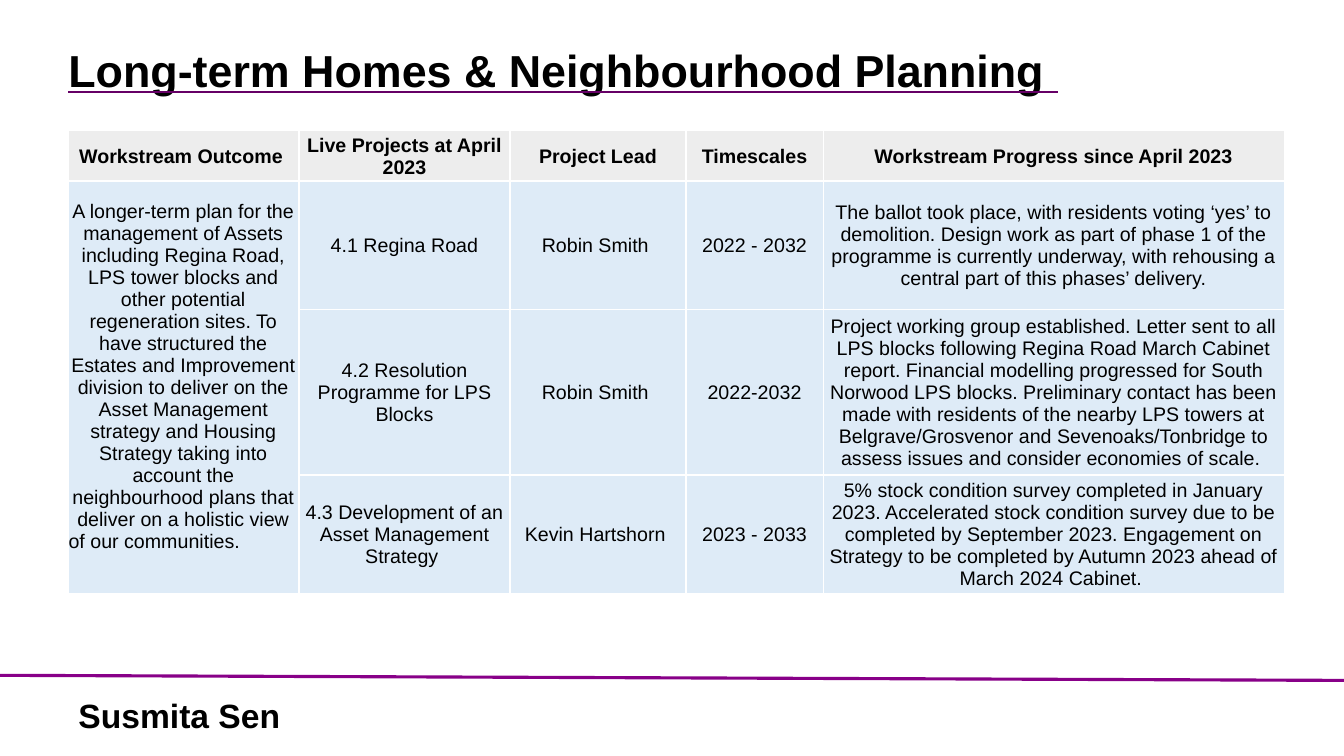
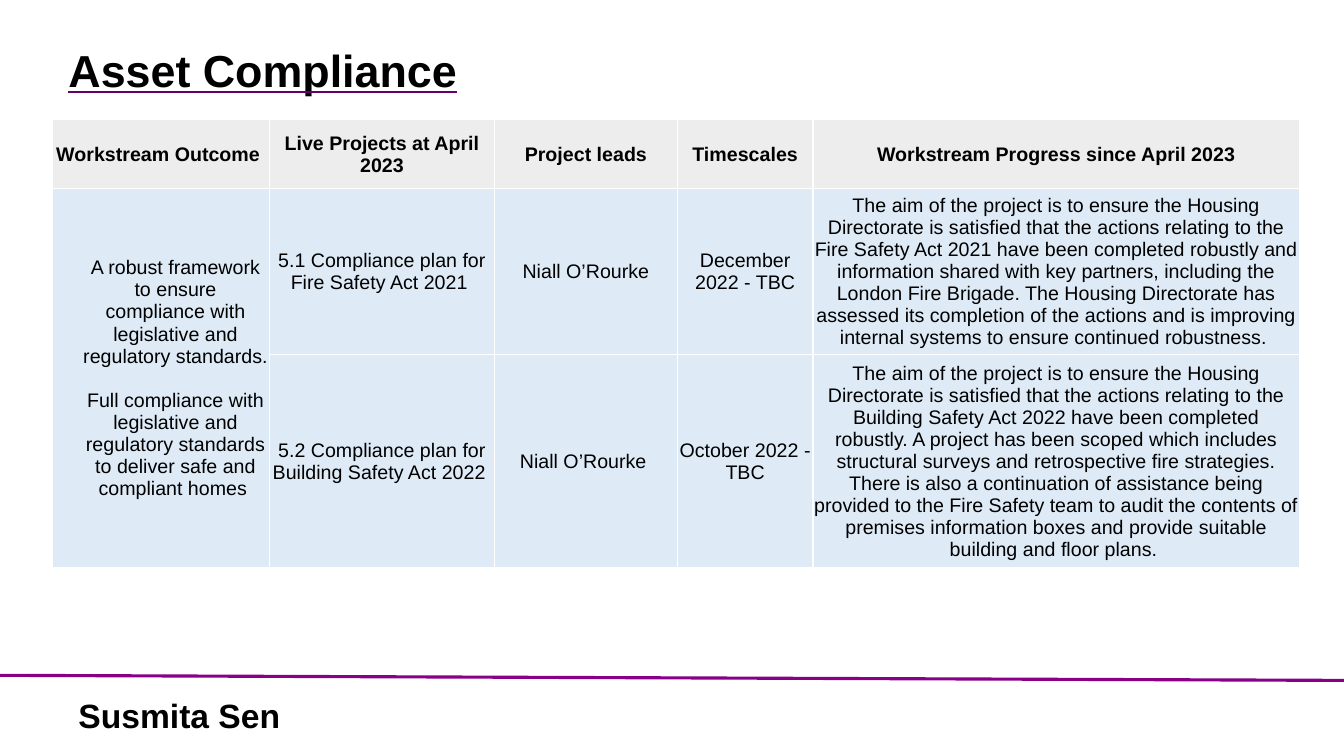
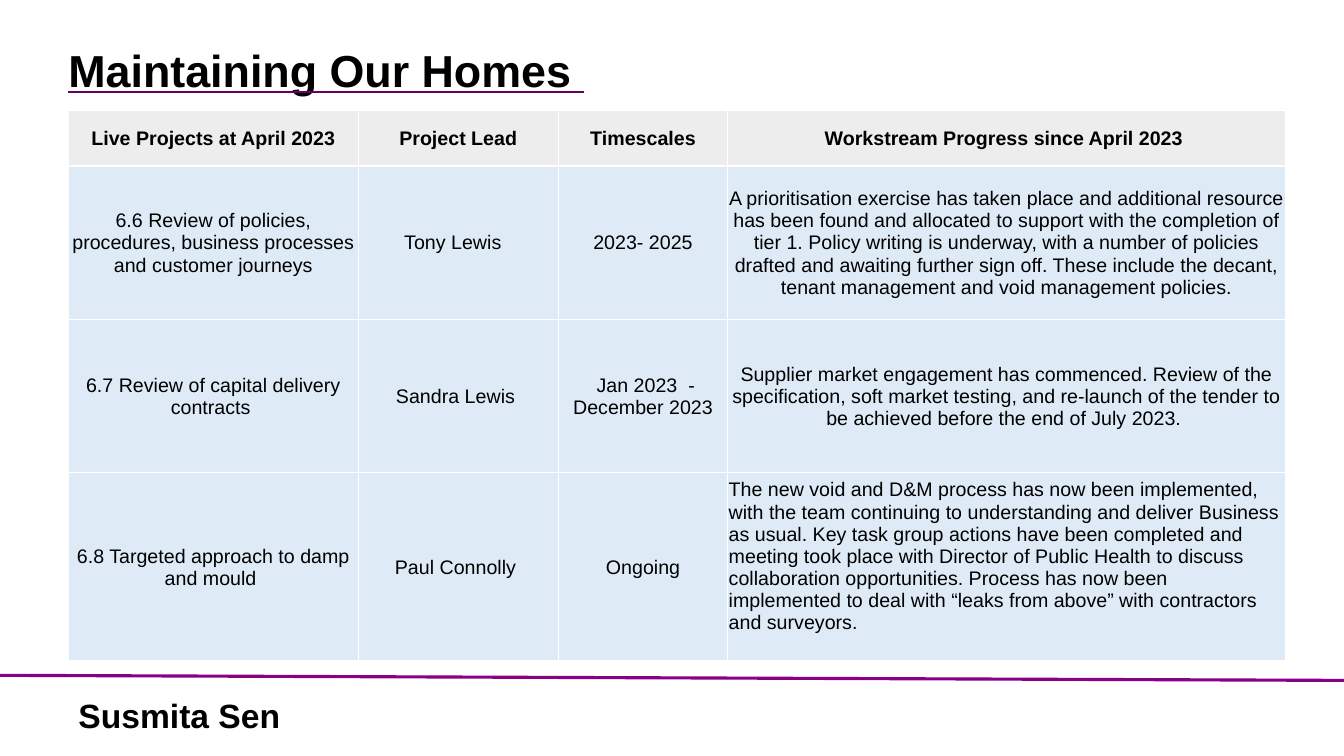
from lxml.etree import SubElement
from pptx import Presentation
from pptx.dml.color import RGBColor
from pptx.enum.shapes import MSO_CONNECTOR
from pptx.enum.text import MSO_ANCHOR, PP_ALIGN
from pptx.oxml.ns import qn
from pptx.util import Inches, Pt

COLOURS = {
    "text": "000000",
    "purple": "880088",
    "underline": "660066",
    "header": "EDEDED",
    "body": "DEEBF7",
    "border": "FFFFFF",
}
FONT = "Arial"
WIDTH, HEIGHT = Inches(13.33), Inches(7.5)
CELL_INSET = 0.01
SPARE_LINE = 0.22


# Grid: the slide is 100 columns wide and 100 rows high
def columns(count):
    return round(WIDTH * count / 100)


def rows(count):
    return round(HEIGHT * count / 100)


def colour(name):
    return RGBColor.from_string(COLOURS[name])


# Text
def write_text(frame, *texts, size=14, bold=False, align=PP_ALIGN.LEFT, last_align=None,
               line_spacing=None, gap=0, underline=None):
    frame.word_wrap = True
    for index, text in enumerate(texts):
        paragraph = frame.paragraphs[0] if index == 0 else frame.add_paragraph()
        is_last = index == len(texts) - 1
        paragraph.alignment = last_align if is_last and last_align else align
        if line_spacing:
            paragraph.line_spacing = line_spacing
        if index and gap:
            paragraph.space_before = Pt(gap)
        run = paragraph.add_run()
        run.text = text
        font = run.font
        font.size, font.bold, font.name = Pt(size), bold, FONT
        font.color.rgb = colour("text")
        if underline:
            font.underline = True
            add_underline_colour(run, underline)


def add_underline_colour(run, name):
    properties = run.font._element
    line_fill = properties.makeelement(qn("a:uFill"), {})
    solid = SubElement(line_fill, qn("a:solidFill"))
    SubElement(solid, qn("a:srgbClr"), val=COLOURS[name])
    properties.find(qn("a:latin")).addprevious(line_fill)


def add_text_box(slide, left, top, width, height, text, anchor=MSO_ANCHOR.TOP, **text_format):
    box = slide.shapes.add_textbox(columns(left), rows(top), columns(width), rows(height))
    box.text_frame.vertical_anchor = anchor
    write_text(box.text_frame, text, bold=True, line_spacing=0.9, **text_format)


# Frame shared by all slides
def add_framed_slide(presentation, title):
    slide = presentation.slides.add_slide(presentation.slide_layouts[6])
    rule = slide.shapes.add_connector(MSO_CONNECTOR.STRAIGHT, 0, rows(89.33), WIDTH, rows(90))
    rule.line.color.rgb = colour("purple")
    rule.line.width = Pt(2.25)
    SubElement(rule._element.spPr, qn("a:effectLst"))
    add_text_box(slide, 5.1, 91.87, 29, 6.27, "Susmita Sen", size=24)
    add_text_box(slide, 4.35, 3.47, 95.65, 12.27, title, anchor=MSO_ANCHOR.MIDDLE,
                 size=32, underline="underline")
    return slide


# Tables
def add_borders(cell):
    properties = cell._tc.get_or_add_tcPr()
    for side in ("lnL", "lnR", "lnT", "lnB"):
        line = SubElement(properties, qn(f"a:{side}"), w=str(Pt(1)))
        solid = SubElement(line, qn("a:solidFill"))
        SubElement(solid, qn("a:srgbClr"), val=COLOURS["border"])


def style_cell(cell, fill, left=CELL_INSET, bottom=0):
    add_borders(cell)
    cell.fill.solid()
    cell.fill.fore_color.rgb = colour(fill)
    cell.vertical_anchor = MSO_ANCHOR.MIDDLE
    cell.margin_left, cell.margin_bottom = Inches(left), Inches(bottom)
    cell.margin_right = cell.margin_top = Inches(CELL_INSET)


def fill_cell(cell, content, is_header):
    """Content is a string, None under a merged cell, or a dict of texts and format."""
    details = dict(content) if isinstance(content, dict) else {"texts": [content] if content else []}
    insets = {key: details.pop(key) for key in ("left", "bottom") if key in details}
    style_cell(cell, "header" if is_header else "body", **insets)
    details.setdefault("align", PP_ALIGN.CENTER)
    write_text(cell.text_frame, *details.pop("texts"), bold=is_header, **details)


def add_project_table(slide, left, top, widths, heights, records, merge_first=False):
    frame = slide.shapes.add_table(len(heights), len(widths), columns(left), rows(top),
                                   columns(sum(widths)), rows(sum(heights)))
    table = frame.table
    for column, width in zip(table.columns, widths):
        column.width = columns(width)
    for row, height in zip(table.rows, heights):
        row.height = rows(height)
    for row_index, record in enumerate(records):
        for column_index, content in enumerate(record):
            fill_cell(table.cell(row_index, column_index), content, row_index == 0)
    if merge_first:
        table.cell(1, 0).merge(table.cell(len(heights) - 1, 0))


# Content
PLANNING = [
    ["Workstream Outcome ", "Live Projects at April 2023", "Project Lead", "Timescales",
     "Workstream Progress since April 2023"],
    [{"texts": ["A longer-term plan for the management of Assets including Regina Road, LPS tower "
                "blocks and other potential regeneration sites. To have structured the Estates and "
                "Improvement division to deliver on the Asset Management strategy and Housing "
                "Strategy taking into account the neighbourhood plans that deliver on a holistic view",
                "of our communities."],
      "last_align": PP_ALIGN.LEFT, "left": 0, "bottom": SPARE_LINE},
     "4.1 Regina Road", "Robin Smith ", "2022 - 2032",
     "The ballot took place, with residents voting ‘yes’ to demolition. Design work as part of "
     "phase 1 of the programme is currently underway, with rehousing a central part of this "
     "phases’ delivery."],
    [None, "4.2 Resolution Programme for LPS Blocks", "Robin Smith ", "2022-2032",
     "Project working group established. Letter sent to all LPS blocks following Regina Road March "
     "Cabinet report. Financial modelling progressed for South Norwood LPS blocks. Preliminary "
     "contact has been made with residents of the nearby LPS towers at Belgrave/Grosvenor and "
     "Sevenoaks/Tonbridge to assess issues and consider economies of scale. "],
    [None, "4.3 Development of an Asset Management Strategy ", "Kevin Hartshorn ", "2023 - 2033",
     "5% stock condition survey completed in January 2023. Accelerated stock condition survey due "
     "to be completed by September 2023. Engagement on Strategy to be completed by Autumn 2023 "
     "ahead of March 2024 Cabinet. "],
]

COMPLIANCE = [
    ["Workstream Outcome ", "Live Projects at April 2023", "Project leads", "Timescales",
     "Workstream Progress since April 2023"],
    [{"texts": ["A robust framework to ensure compliance with legislative and regulatory standards. ",
                "Full compliance with legislative and regulatory standards to deliver safe and "
                "compliant homes "],
      "gap": 16, "left": 0.3},
     "5.1 Compliance plan for Fire Safety Act 2021 ", "Niall O’Rourke", "December 2022 - TBC",
     "The aim of the project is to ensure the Housing Directorate is satisfied that the actions "
     "relating to the Fire Safety Act 2021 have been completed robustly and information shared "
     "with key partners, including the London Fire Brigade. The Housing Directorate has assessed "
     "its completion of the actions and is improving internal systems to ensure continued "
     "robustness. "],
    [None, "5.2 Compliance plan for Building Safety Act 2022 ", "Niall O’Rourke ",
     "October 2022 - TBC",
     "The aim of the project is to ensure the Housing Directorate is satisfied that the actions "
     "relating to the Building Safety Act 2022 have been completed robustly. A project has been "
     "scoped which includes structural surveys and retrospective fire strategies. There is also a "
     "continuation of assistance being provided to the Fire Safety team to audit the contents of "
     "premises information boxes and provide suitable building and floor plans. "],
]

MAINTENANCE = [
    ["Live Projects at April 2023", "Project Lead", "Timescales",
     "Workstream Progress since April 2023 "],
    ["6.6 Review of policies, procedures, business processes and customer journeys",
     "Tony Lewis  ", "2023- 2025",
     "A prioritisation exercise has taken place and additional resource has been found and "
     "allocated to support with the completion of tier 1. Policy writing is underway, with a "
     "number of policies drafted and awaiting further sign off. These include the decant, tenant "
     "management and void management policies."],
    ["6.7 Review of capital delivery contracts ", "Sandra Lewis ", " Jan 2023  - December 2023",
     "Supplier market engagement has commenced. Review of the specification, soft market testing, "
     "and re-launch of the tender to be achieved before the end of July 2023. "],
    ["6.8 Targeted approach to damp and mould ", "Paul Connolly ", "Ongoing",
     {"texts": ["The new void and D&M process has now been implemented, with the team continuing to "
                "understanding and deliver Business as usual. Key task group actions have been "
                "completed and meeting took place with Director of Public Health to discuss "
                "collaboration opportunities. Process has now been implemented to deal with “leaks "
                "from above” with contractors and surveyors. "],
      "align": PP_ALIGN.LEFT, "bottom": SPARE_LINE}],
]


def main():
    presentation = Presentation()
    presentation.slide_width, presentation.slide_height = WIDTH, HEIGHT

    slide = add_framed_slide(presentation, "Long-term Homes & Neighbourhood Planning ")
    add_project_table(slide, 5.1, 17.25, [17.15, 15.7, 13.1, 10.2, 34.3],
                      [6.7, 16.95, 20.5, 14.6], PLANNING, merge_first=True)

    slide = add_framed_slide(presentation, "Asset Compliance")
    add_project_table(slide, 3.9, 15.8, [16.15, 16.75, 13.6, 10.1, 36.2],
                      [9.15, 20.5, 26.3], COMPLIANCE, merge_first=True)

    slide = add_framed_slide(presentation, "Maintaining Our Homes ")
    add_project_table(slide, 5.1, 14.6, [21.55, 14.9, 12.6, 41.5],
                      [7.35, 20.3, 20.3, 23.3], MAINTENANCE)

    presentation.save("out.pptx")


if __name__ == "__main__":
    main()
